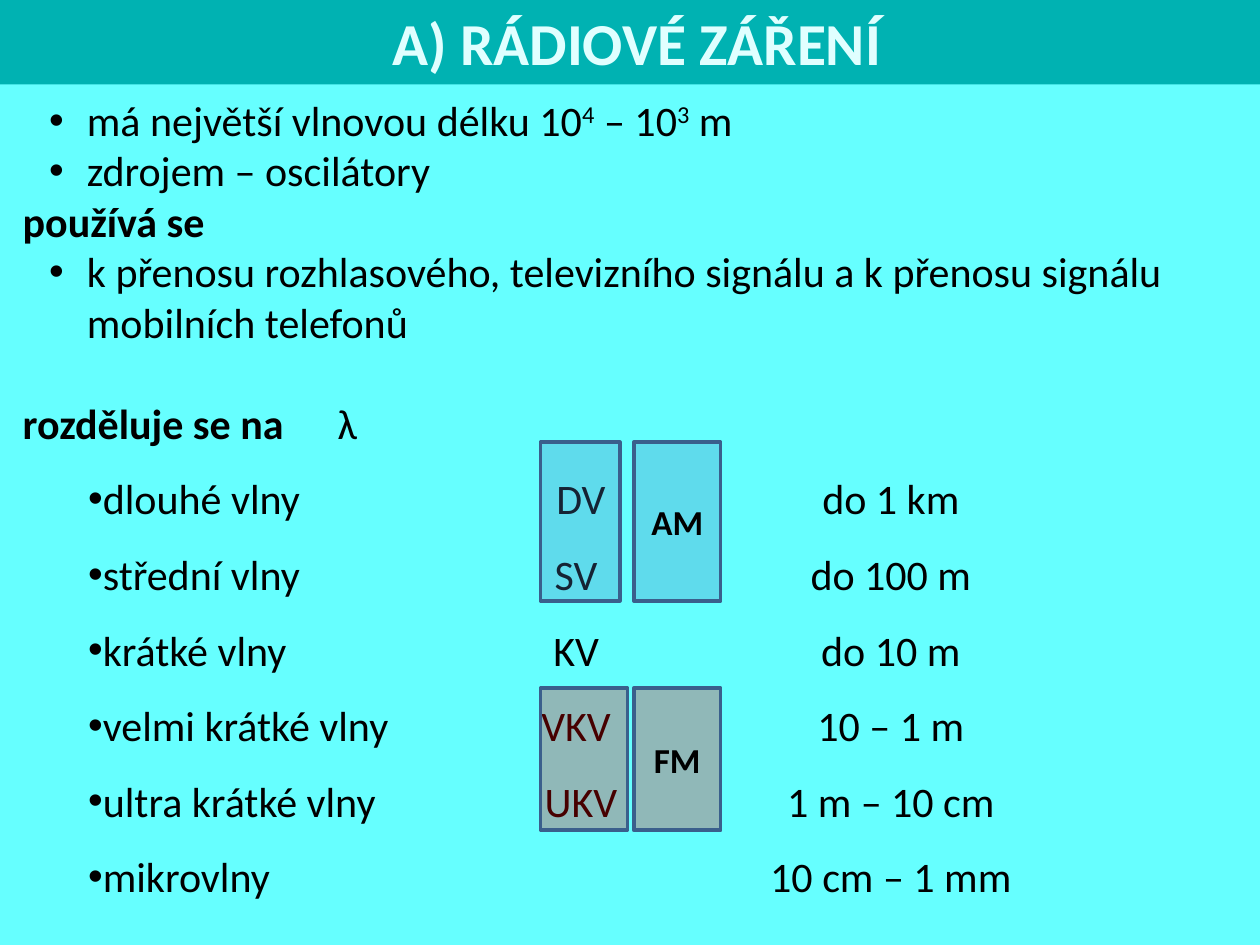
"""Build a slide about radio radiation and its wave bands."""
from dataclasses import dataclass

from lxml import etree
from pptx import Presentation
from pptx.dml.color import RGBColor
from pptx.enum.shapes import MSO_SHAPE
from pptx.enum.text import MSO_ANCHOR, MSO_AUTO_SIZE, PP_ALIGN
from pptx.oxml.ns import qn
from pptx.util import Inches, Pt

RECT = MSO_SHAPE.RECTANGLE
MIDDLE, TOP = MSO_ANCHOR.MIDDLE, MSO_ANCHOR.TOP
CENTER, LEFT = PP_ALIGN.CENTER, PP_ALIGN.LEFT
NO_FIT = MSO_AUTO_SIZE.NONE

FONT = "Calibri"
COLORS = {
    "background": "66FFFF",
    "banner": "00B2B2",
    "title": "E0FFFF",
    "text": "000000",
    "am": "4F81BD",
    "fm": "FF0000",
    "outline": "3A5F8C",
}
ALPHA = 28000


@dataclass
class Run:
    text: str
    bold: bool = False
    superscript: bool = False


@dataclass
class Para:
    runs: list[Run]
    margin: float
    indent: float = 0
    bullet: bool = False
    tabs: tuple[tuple[float, str], ...] = ()
    spacing: float = 1.0
    before: float = 0


@dataclass
class Box:
    left: float
    top: float
    width: float
    height: float
    color: str
    label: str = ""


def rgb(name: str) -> RGBColor:
    return RGBColor.from_string(COLORS[name])


def point(*runs: Run) -> Para:
    return Para(list(runs), 0.59, -0.3, bullet=True)


def heading(*runs: Run, tabs=(), before: float = 0) -> Para:
    return Para(list(runs), 0.08, tabs=tabs, before=before)


def band(name: str, code: str, wavelength: str) -> Para:
    return Para([Run(f"{name}\t{code}\t{wavelength}")], 0.3, 0.3, bullet=True,
                tabs=((4.51, "ctr"), (6.97, "ctr")), spacing=1.5)


PARAGRAPHS = [
    point(Run("má největší vlnovou délku 10"), Run("4", superscript=True),
          Run(" – 10"), Run("3", superscript=True), Run(" m")),
    point(Run("zdrojem – oscilátory")),
    heading(Run("používá se", bold=True)),
    point(Run("k přenosu rozhlasového, televizního signálu "
              "a k přenosu signálu mobilních telefonů")),
    heading(Run("rozděluje se na\t", bold=True), Run("λ"),
            tabs=((7, "l"),), before=29),
    band("dlouhé vlny", "DV", "do 1 km"),
    band("střední vlny", "SV ", "do 100 m"),
    band("krátké vlny", "KV ", "do 10 m"),
    band("velmi krátké vlny", "VKV ", "10 – 1 m"),
    band("ultra krátké vlny", "UKV", "1 m – 10 cm"),
    band("mikrovlny", "", "10 cm – 1 mm"),
]
BOXES = [
    Box(4.29, 3.51, 0.63, 1.26, "am"),
    Box(5.03, 3.51, 0.69, 1.26, "am", "AM"),
    Box(4.29, 5.46, 0.69, 1.13, "fm"),
    Box(5.03, 5.46, 0.69, 1.13, "fm", "FM"),
]


def place(s, left: float, top: float, width: float, height: float) -> None:
    s.left, s.top = Inches(left), Inches(top)
    s.width, s.height = Inches(width), Inches(height)


def add_run(p, text: str, size: float, color: str, bold: bool):
    r = p.add_run()
    r.text = text
    r.font.name, r.font.size, r.font.bold = FONT, Pt(size), bold
    r.font.color.rgb = rgb(color)
    return r


def set_indent(p, margin: float, indent: float):
    pPr = p._p.get_or_add_pPr()
    pPr.set("marL", str(Inches(margin)))
    pPr.set("indent", str(Inches(indent)))
    return pPr


def fill_title(s) -> None:
    place(s, 0, 0, 10, 0.67)
    s.fill.solid()
    s.fill.fore_color.rgb = rgb("banner")
    tf = s.text_frame
    tf.auto_size, tf.vertical_anchor = NO_FIT, MIDDLE
    p = tf.paragraphs[0]
    p.alignment = CENTER
    set_indent(p, 0.11, 0)
    add_run(p, "A) RÁDIOVÉ ZÁŘENÍ", 34, "title", True)


def fill_paragraph(p, para: Para) -> None:
    p.alignment, p.line_spacing = LEFT, para.spacing
    p.space_before, p.space_after = Pt(para.before), Pt(0)
    pPr = set_indent(p, para.margin, para.indent)
    if para.bullet:
        etree.SubElement(pPr, qn("a:buFont")).set("typeface", "Arial")
        etree.SubElement(pPr, qn("a:buChar")).set("char", "•")
    else:
        etree.SubElement(pPr, qn("a:buNone"))
    if para.tabs:
        tab_list = etree.SubElement(pPr, qn("a:tabLst"))
        for position, align in para.tabs:
            tab = etree.SubElement(tab_list, qn("a:tab"))
            tab.set("pos", str(Inches(position)))
            tab.set("algn", align)
    for run in para.runs:
        r = add_run(p, run.text, 24, "text", run.bold)
        if run.superscript:
            r.font._element.set("baseline", "30000")


def fill_body(s, paragraphs: list[Para]) -> None:
    place(s, 0, 0.7, 10, 6.56)
    tf = s.text_frame
    tf.auto_size, tf.vertical_anchor, tf.word_wrap = NO_FIT, TOP, True
    for i, para in enumerate(paragraphs):
        fill_paragraph(tf.add_paragraph() if i else tf.paragraphs[0], para)


def add_box(slide, box: Box) -> None:
    s = slide.shapes.add_shape(RECT, Inches(box.left), Inches(box.top),
                               Inches(box.width), Inches(box.height))
    s.shadow.inherit = False
    s.fill.solid()
    s.fill.fore_color.rgb = rgb(box.color)
    color = s._element.spPr.find(qn("a:solidFill")).find(qn("a:srgbClr"))
    etree.SubElement(color, qn("a:alpha")).set("val", str(ALPHA))
    s.line.color.rgb, s.line.width = rgb("outline"), Pt(2)
    if box.label:
        tf = s.text_frame
        tf.vertical_anchor = MIDDLE
        p = tf.paragraphs[0]
        p.alignment = CENTER
        add_run(p, box.label, 20, "text", True)


def main() -> None:
    prs = Presentation()
    prs.slide_width, prs.slide_height = Inches(10), Inches(7.5)
    slide = prs.slides.add_slide(prs.slide_layouts[1])
    slide.background.fill.solid()
    slide.background.fill.fore_color.rgb = rgb("background")
    fill_title(slide.shapes.title)
    fill_body(slide.placeholders[1], PARAGRAPHS)
    for box in BOXES:
        add_box(slide, box)
    prs.save("out.pptx")


if __name__ == "__main__":
    main()
